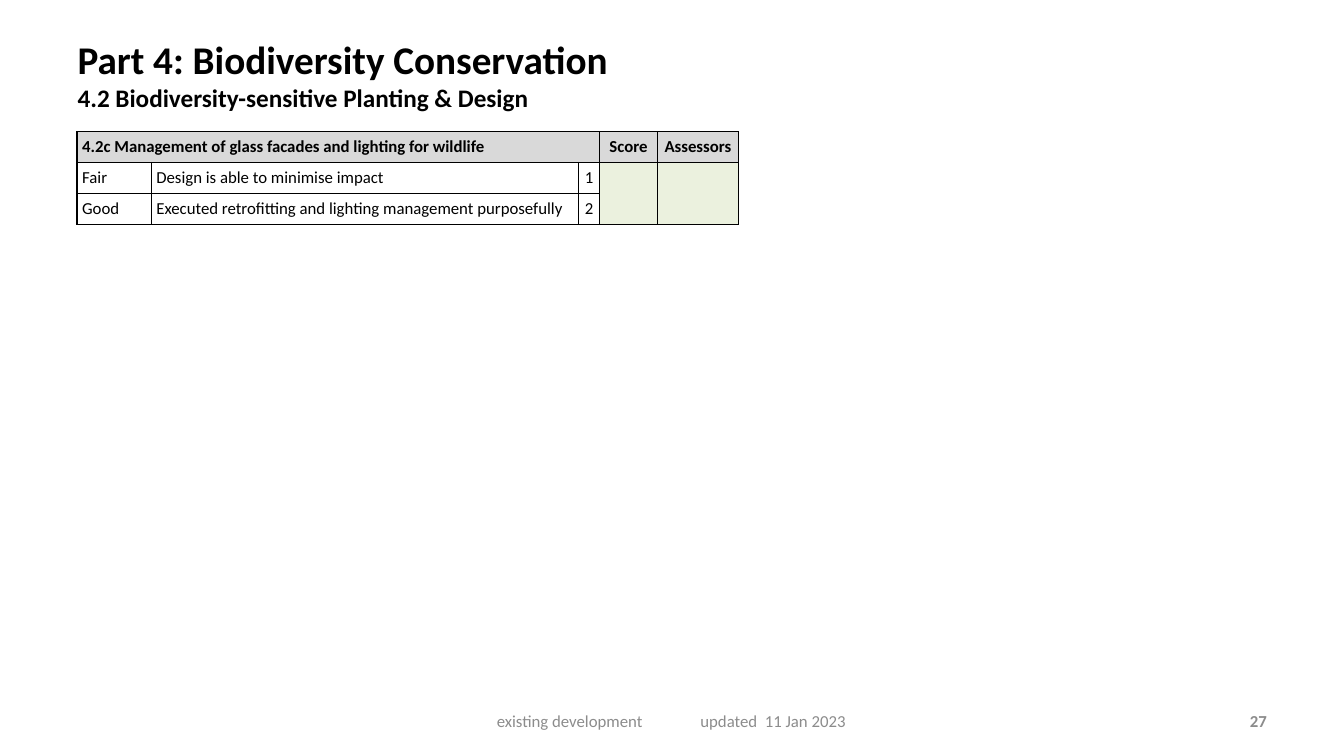
from lxml.etree import SubElement
from pptx import Presentation
from pptx.dml.color import RGBColor
from pptx.enum.text import MSO_ANCHOR, MSO_AUTO_SIZE, PP_ALIGN
from pptx.oxml.ns import qn
from pptx.util import Cm, Pt

COLOURS = {"text": "000000", "muted": "8C8C8C", "header": "D9D9D9",
           "score": "EBF1DE", "border": "000000"}


class ScoreSlide:
    """Holds the style and the current slide."""
    font_name = "Calibri"
    body_size = 12
    cell_margin = Cm(0.13)

    def __init__(self, deck):
        self.slide = deck.slides.add_slide(deck.slide_layouts[5])

    def colour(self, name):
        return RGBColor.from_string(COLOURS[name])

    def style(self, font, size=body_size, colour="text", bold=False):
        font.name, font.size, font.bold = self.font_name, Pt(size), bold
        font.color.rgb = self.colour(colour)

    def title(self, heading, subheading, left, top, width, height):
        title = self.slide.shapes.title
        title.left, title.top = Cm(left), Cm(top)
        title.width, title.height = Cm(width), Cm(height)
        frame = title.text_frame
        frame.auto_size = MSO_AUTO_SIZE.NONE
        frame.vertical_anchor = MSO_ANCHOR.TOP
        line = frame.paragraphs[0]
        line.alignment = PP_ALIGN.LEFT
        self.style(line.font, 28, bold=True)
        line.add_run().text = heading
        line.add_line_break()
        part = line.add_run()
        part.text = subheading
        part.font.size = Pt(18)

    def footer(self, text, left, width, align, bold=False, indent=0.25, tab=None):
        box = self.slide.shapes.add_textbox(Cm(left), Cm(17.65), Cm(width), Cm(1.02))
        frame = box.text_frame
        frame.word_wrap = True
        frame.vertical_anchor = MSO_ANCHOR.MIDDLE
        frame.margin_left = Cm(indent)
        line = frame.paragraphs[0]
        line.text = text
        line.alignment = align
        if tab:
            stops = SubElement(line._p.get_or_add_pPr(), qn("a:tabLst"))
            SubElement(stops, qn("a:tab"), pos=str(Cm(tab)), algn="l")
        self.style(line.font, colour="muted", bold=bold)

    def border(self, cell):
        properties = cell._tc.get_or_add_tcPr()
        for side in ("lnL", "lnR", "lnT", "lnB"):
            edge = SubElement(properties, qn(f"a:{side}"), w=str(Pt(1)))
            fill = SubElement(edge, qn("a:solidFill"))
            SubElement(fill, qn("a:srgbClr"), val=COLOURS["border"])

    def table(self, rows, left, top, widths, row_height):
        table = self.slide.shapes.add_table(
            len(rows), len(widths), Cm(left), Cm(top),
            Cm(sum(widths)), Cm(row_height * len(rows))).table
        table.first_row = table.horz_banding = False
        for column, width in zip(table.columns, widths):
            column.width = Cm(width)
        for r, row in enumerate(rows):
            table.rows[r].height = Cm(row_height)
            for c, text in enumerate(row):
                self.cell(table.cell(r, c), text, is_header=r == 0,
                          is_score=c >= 3, centred=c >= 2)
        return table

    def cell(self, cell, text, is_header, is_score, centred):
        self.border(cell)
        cell.margin_left = cell.margin_right = self.cell_margin
        cell.margin_top = cell.margin_bottom = self.cell_margin
        cell.vertical_anchor = MSO_ANCHOR.MIDDLE
        if is_header or is_score:
            cell.fill.solid()
            cell.fill.fore_color.rgb = self.colour("header" if is_header else "score")
        else:
            cell.fill.background()
        line = cell.text_frame.paragraphs[0]
        line.text = text
        line.alignment = PP_ALIGN.CENTER if centred else PP_ALIGN.LEFT
        self.style(line.font, bold=is_header)


def main():
    deck = Presentation()
    deck.slide_width, deck.slide_height = Cm(33.87), Cm(19.05)
    page = ScoreSlide(deck)

    # Title
    page.title("Part 4: Biodiversity Conservation",
               "4.2 Biodiversity-sensitive Planting & Design",
               1.7, 0.76, 26.3, 2.5)

    # Scoring table
    criteria = [
        ["4.2c Management of glass facades and lighting for wildlife",
         "", "", "Score", "Assessors"],
        ["Fair", "Design is able to minimise impact", "1", "", ""],
        ["Good", "Executed retrofitting and lighting management purposefully",
         "2", "", ""],
    ]
    scoring = page.table(criteria, 1.94, 3.32, [1.87, 10.77, 0.53, 1.46, 2.04], 0.77)
    scoring.cell(0, 0).merge(scoring.cell(0, 2))
    for column in (3, 4):
        scoring.cell(1, column).merge(scoring.cell(2, column))

    # Footer and page number
    page.footer("existing development\tupdated  11 Jan 2023", 11.58, 10.72,
                PP_ALIGN.LEFT, indent=0.94, tab=5.13)
    page.footer("27", 24.28, 7.9, PP_ALIGN.RIGHT, bold=True)

    deck.save("out.pptx")


if __name__ == "__main__":
    main()
